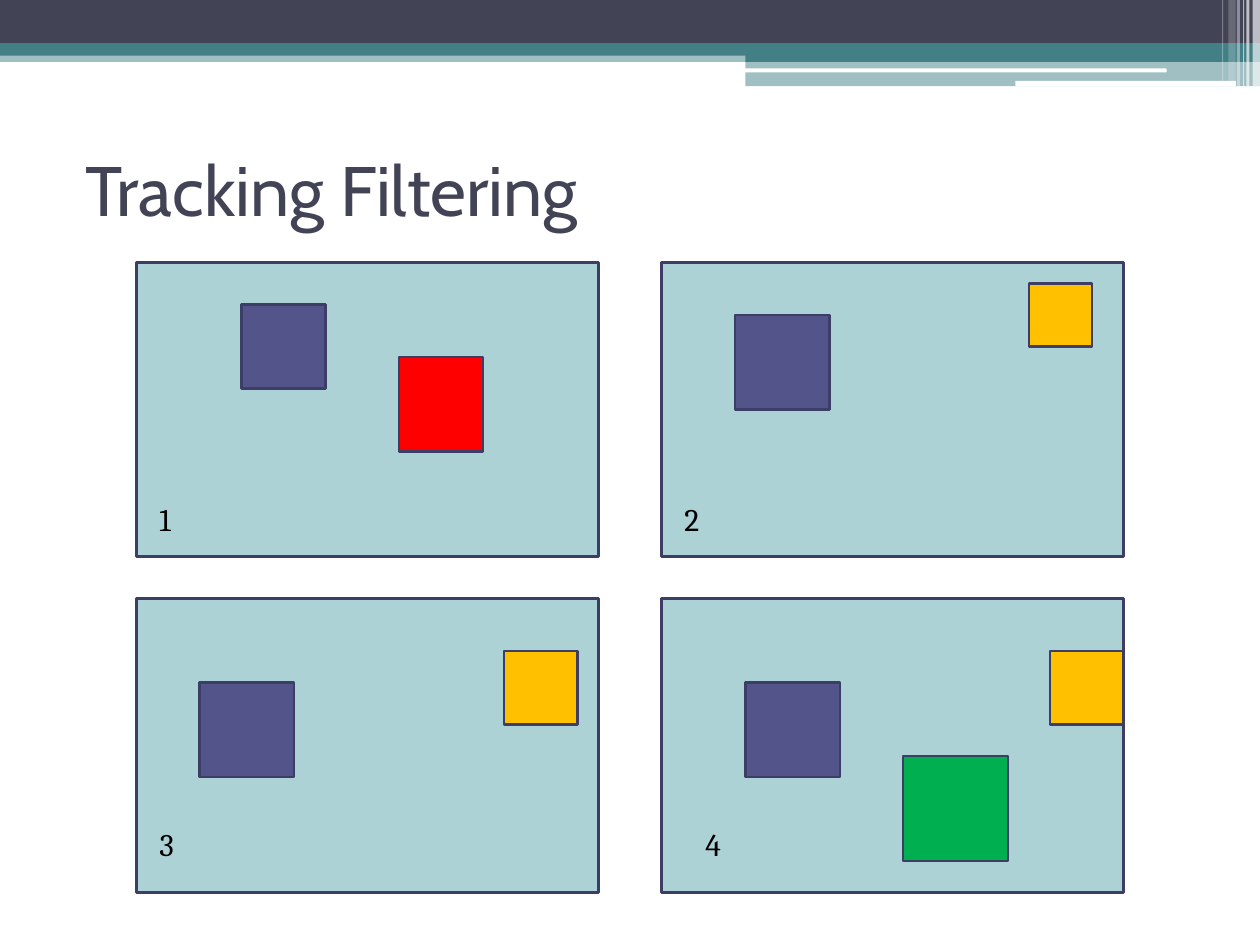
"""Build the Tracking Filtering slide: four numbered frames of tracked objects."""
import pptx
import pptx.dml.color
import pptx.enum.shapes
import pptx.enum.text
import pptx.oxml.ns
import pptx.util
from lxml import etree

SCALE = 914400 // 120
RECT = pptx.enum.shapes.MSO_SHAPE.RECTANGLE
ROUND = pptx.enum.shapes.MSO_SHAPE.ROUNDED_RECTANGLE
ANCHOR = pptx.enum.text.MSO_ANCHOR
DARK, TEAL, WHITE = "424456", "438086", "FFFFFF"
FRAME, OUTLINE = "ADD2D6", "3D3E66"
PURPLE, RED, AMBER, GREEN = "53548A", "FF0000", "FFC000", "00B050"

presentation = pptx.Presentation()
presentation.slide_width = 1200 * SCALE
presentation.slide_height = 900 * SCALE
slide = presentation.slides.add_slide(presentation.slide_layouts[6])


def add_box(box, color, kind=RECT, opacity=100, outline=None):
    shape = slide.shapes.add_shape(kind, *[length * SCALE for length in box])
    shape.shadow.inherit = False
    shape.fill.solid()
    shape.fill.fore_color.rgb = pptx.dml.color.RGBColor.from_string(color)
    if opacity < 100:
        tag = pptx.oxml.ns.qn("a:srgbClr")
        fill_color = next(shape.fill.fore_color._xFill.iter(tag))
        alpha = etree.SubElement(fill_color, pptx.oxml.ns.qn("a:alpha"))
        alpha.set("val", str(opacity * 1000))
    if outline:
        shape.line.color.rgb = pptx.dml.color.RGBColor.from_string(outline)
        shape.line.width = pptx.util.Pt(1.5)
    else:
        shape.line.fill.background()


def add_text(box, text, color, anchor, font_format):
    shape = slide.shapes.add_textbox(*[length * SCALE for length in box])
    shape.text_frame.word_wrap = True
    shape.text_frame.vertical_anchor = anchor
    run = shape.text_frame.paragraphs[0].add_run()
    run.text = text
    run.font.color.rgb = pptx.dml.color.RGBColor.from_string(color)
    for name, value in font_format.items():
        setattr(run.font, name, value)


bands = [
    ((0, 48, 1200, 11), TEAL, RECT, 50),
    ((0, 0, 1200, 41), DARK, RECT, 100),
    ((0, 41, 1200, 12), TEAL, RECT, 100),
    ((710, 47, 490, 12), TEAL, RECT, 100),
    ((710, 58, 490, 24), TEAL, RECT, 50),
    ((709, 65, 402, 4), WHITE, ROUND, 100),
    ((967, 77, 210, 5), WHITE, ROUND, 100),
]
for band in bands:
    add_box(*band)

stripes = [
    (1193, 7, 82, 65),
    (1187, 3, 82, 65),
    (1184, 1, 82, 60),
    (1178, 3, 82, 40),
    (1170, 7, 77, 20),
    (1164, 1, 77, 30),
]
for left, width, height, opacity in stripes:
    add_box((left, 0, width, height), WHITE, opacity=opacity)

title_format = {"name": "Cabin", "size": pptx.util.Pt(40)}
add_text((70, 110, 1080, 140), "Tracking Filtering", DARK, ANCHOR.MIDDLE, title_format)

label_format = {"name": "Cambria", "size": pptx.util.Pt(18)}
frames = [
    ((10, 220), [((100, 40, 80, 80), PURPLE), ((250, 90, 80, 90), RED)]),
    ((10, 220), [((70, 50, 90, 90), PURPLE), ((350, 20, 60, 60), AMBER)]),
    ((10, 210), [((60, 80, 90, 90), PURPLE), ((350, 50, 70, 70), AMBER)]),
    ((30, 210), [((80, 80, 90, 90), PURPLE), ((370, 50, 70, 70), AMBER),
                 ((230, 150, 100, 100), GREEN)]),
]
for index, ((label_left, label_top), targets) in enumerate(frames):
    row, column = divmod(index, 2)
    left, top = 130 + 500 * column, 250 + 320 * row
    add_box((left, top, 440, 280), FRAME, outline=OUTLINE)
    for (x, y, width, height), color in targets:
        add_box((left + x, top + y, width, height), color, outline=OUTLINE)
    label_box = (left + label_left, top + label_top, 60, 50)
    add_text(label_box, str(index + 1), "000000", ANCHOR.TOP, label_format)

presentation.save("out.pptx")
